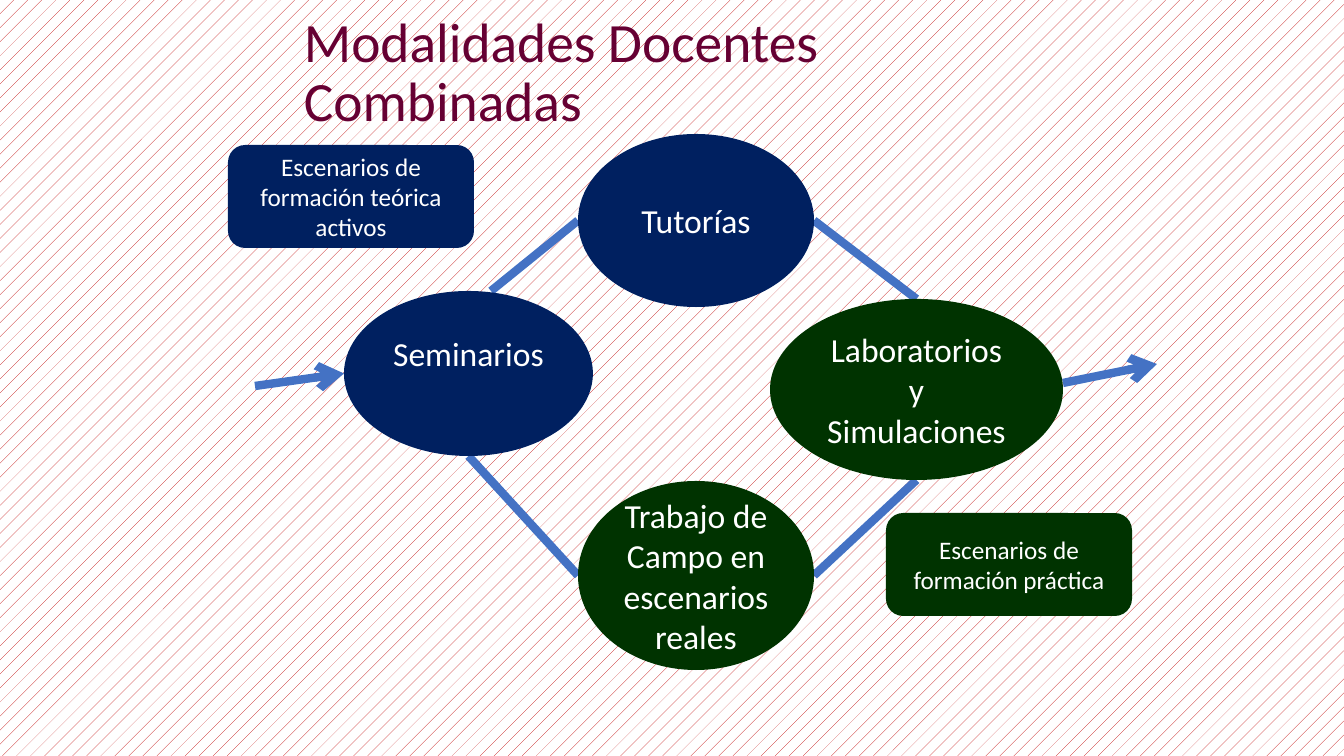
from lxml import etree
from pptx import Presentation
from pptx.dml.color import RGBColor
from pptx.enum.dml import MSO_PATTERN
from pptx.enum.shapes import MSO_CONNECTOR, MSO_SHAPE
from pptx.enum.text import MSO_ANCHOR, PP_ALIGN
from pptx.oxml.ns import qn
from pptx.util import Pt

OVAL, ROUNDED = MSO_SHAPE.OVAL, MSO_SHAPE.ROUNDED_RECTANGLE
STRAIGHT = MSO_CONNECTOR.STRAIGHT
MIDDLE, CENTER = MSO_ANCHOR.MIDDLE, PP_ALIGN.CENTER
DOTS = MSO_PATTERN.PERCENT_5

NAVY = RGBColor(0x00, 0x20, 0x60)
GREEN = RGBColor(0x00, 0x33, 0x00)
BLUE = RGBColor(0x44, 0x72, 0xC4)
WINE = RGBColor(0x66, 0x00, 0x33)
RED = RGBColor(0xC0, 0x00, 0x00)
WHITE = RGBColor(0xFF, 0xFF, 0xFF)
FONT = "Calibri"

# Content, in px: left, top, width, height
TITLE = "Modalidades Docentes\vCombinadas"
TITLE_PLACE = (294, 30, 832, 88)
TUTORIAS = (578, 134, 236, 173)
SEMINARIOS = (344, 291, 249, 165)
CAMPO = (578, 481, 236, 189)
LABORATORIOS = (770, 299, 293, 181)

# Shape, place, text, fill, text size, extra space under the text
NODES = [
    (OVAL, TUTORIAS, "Tutorías", NAVY, 24, 0),
    (OVAL, SEMINARIOS, "Seminarios", NAVY, 24, 41),
    (OVAL, CAMPO, "Trabajo de Campo en escenarios reales", GREEN, 24, 0),
    (OVAL, LABORATORIOS, "Laboratorios y Simulaciones", GREEN, 24, 0),
    (ROUNDED, (228, 145, 246, 103),
     "Escenarios de formación teórica activos", NAVY, 18, 0),
    (ROUNDED, (886, 513, 246, 103),
     "Escenarios de formación práctica", GREEN, 18, 0),
]


def px(length):
    return round(length * 914400 / 100.8)


def edge(place, side):
    left, top, width, height = place
    return {
        "left": (left, top + height / 2),
        "right": (left + width, top + height / 2),
        "top": (left + width / 2, top),
        "bottom": (left + width / 2, top + height),
    }[side]


# Start, end, arrowhead
LINKS = [
    ((491, 291), edge(TUTORIAS, "left"), False),
    (edge(TUTORIAS, "right"), edge(LABORATORIOS, "top"), False),
    (edge(CAMPO, "right"), edge(LABORATORIOS, "bottom"), False),
    (edge(SEMINARIOS, "bottom"), edge(CAMPO, "left"), False),
    ((255, 386), edge(SEMINARIOS, "left"), True),
    ((1063, 383), (1157, 364), True),
]


def write(shape, text, size, color):
    frame = shape.text_frame
    frame.word_wrap = True
    frame.vertical_anchor = MIDDLE
    frame.text = text
    para = frame.paragraphs[0]
    for span in para.runs:
        span.font.name = FONT
        span.font.size = Pt(size)
        span.font.color.rgb = color
    return para


def add_link(page, start, end, arrow):
    link = page.shapes.add_connector(STRAIGHT, *map(px, start + end))
    link.line.color.rgb = BLUE
    link.line.width = Pt(6)
    if arrow:
        line = link.line._get_or_add_ln()
        etree.SubElement(line, qn("a:tailEnd"), type="arrow")
    etree.SubElement(link._element.spPr, qn("a:effectLst"))


def add_node(page, kind, place, text, fill, size, space_under):
    node = page.shapes.add_shape(kind, *map(px, place))
    node.shadow.inherit = False
    node.fill.solid()
    node.fill.fore_color.rgb = fill
    node.line.fill.background()
    write(node, text, size, WHITE).alignment = CENTER
    node.text_frame.margin_bottom += px(space_under)


def main():
    deck = Presentation()
    deck.slide_width, deck.slide_height = px(1344), px(756)
    page = deck.slides.add_slide(deck.slide_layouts[6])

    # Background
    backdrop = page.background.fill
    backdrop.patterned()
    backdrop.pattern = DOTS
    backdrop.fore_color.rgb = RED
    backdrop.back_color.rgb = WHITE

    # Title
    title = page.shapes.add_textbox(*map(px, TITLE_PLACE))
    write(title, TITLE, 39.6, WINE).line_spacing = 0.9

    # Cycle of teaching modes
    for link in LINKS:
        add_link(page, *link)
    for node in NODES:
        add_node(page, *node)

    deck.save("out.pptx")


if __name__ == "__main__":
    main()
